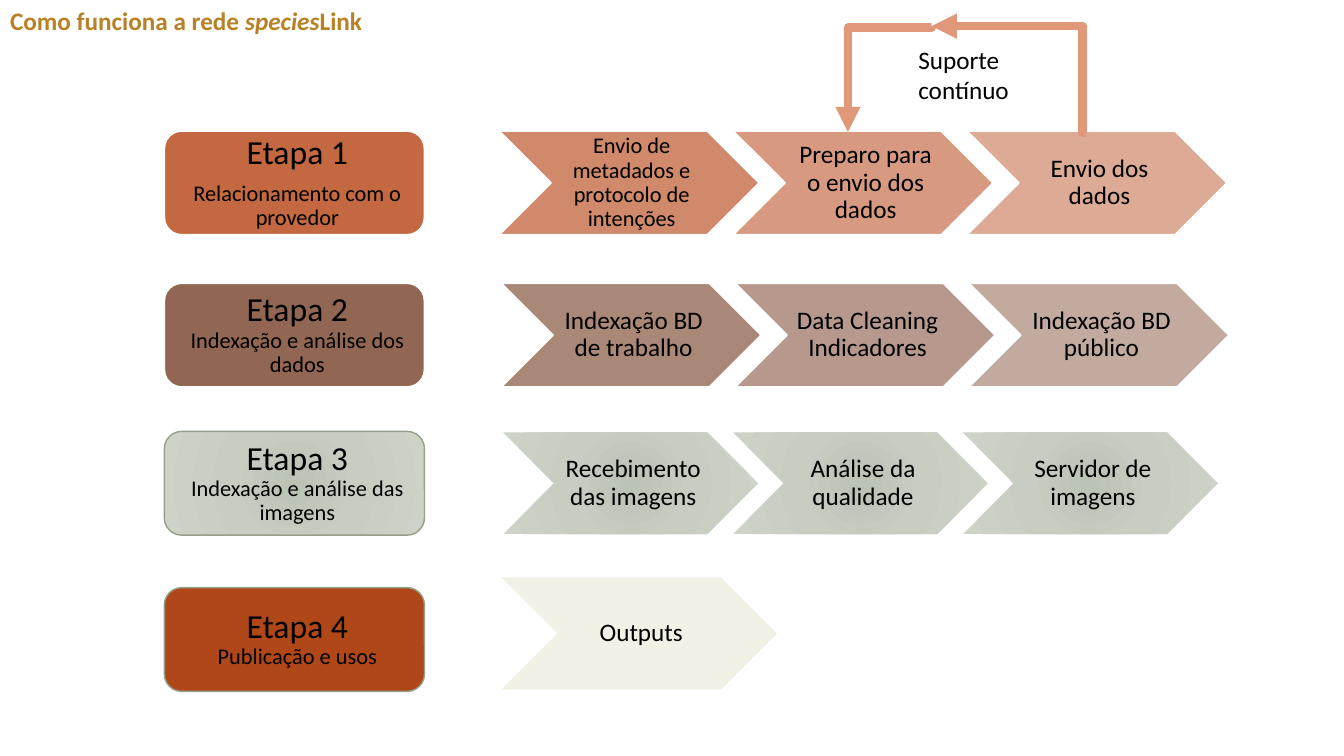
from dataclasses import dataclass
from typing import Optional

from lxml.etree import SubElement
from pptx import Presentation
from pptx.dml.color import RGBColor
from pptx.enum.shapes import MSO_CONNECTOR, MSO_SHAPE
from pptx.enum.text import MSO_ANCHOR, MSO_AUTO_SIZE, PP_ALIGN
from pptx.oxml.ns import qn
from pptx.util import Pt

PX = 9144
FONT = "Calibri"
COLOURS = {
    "title": "B98125", "text": "000000", "white": "FFFFFF", "arrow": "E09878",
    "rust": "BD582C", "brown": "865640", "cream": "E7E4CC", "brick": "B04718",
    "olive": "94A088",
}
SAGE_STOPS = ((0, "BBC3B5"), (45, "C7CDC1"), (100, "CDD4C7"))
STAGE_LEFT, STAGE_WIDTH, STAGE_HEIGHT = 163, 258, 103


@dataclass(frozen=True)
class Step:
    text: str
    alpha: int = 100
    size: int = 18


@dataclass(frozen=True)
class Stage:
    text: str
    top: int
    fill: str
    alpha: int
    border: str
    border_width: float
    steps_at: tuple[int, int, int, int]
    steps_fill: str
    steps_border: Optional[str]
    steps: tuple[Step, ...]


@dataclass(frozen=True)
class Elbow:
    start: tuple[int, int]
    end: tuple[int, int]
    bend: int
    turn: int = 0


STAGES = (
    Stage("Etapa 1\nRelacionamento com o provedor", 130, "rust", 90, "white", 1.25,
          (495, 130, 258, 103), "rust", "white",
          (Step("Envio de metadados e protocolo de intenções", 70, 16),
           Step("Preparo para o envio dos dados", 60),
           Step("Envio dos dados", 50))),
    Stage("Etapa 2\vIndexação e análise dos dados", 281, "brown", 90, "white", 1.25,
          (497, 281, 258, 103), "brown", "white",
          (Step("Indexação BD de trabalho", 70),
           Step("Data Cleaning\vIndicadores", 60),
           Step("Indexação BD público", 50))),
    Stage("Etapa 3\vIndexação e análise das imagens", 428, "sage", 100, "olive", 1,
          (499, 429, 253, 101), "sage", None,
          (Step("Recebimento das imagens"),
           Step("Análise da qualidade"),
           Step("Servidor de imagens"))),
    Stage("Etapa 4\vPublicação e usos", 583, "brick", 100, "olive", 1,
          (495, 572, 277, 113), "cream", "white",
          (Step("Outputs", 50),)),
)
SUPPORT_LOOP = (
    Elbow((1077, 132), (924, 26), 2100),
    Elbow((830, 37), (935, 120), 1400, 90),
)


def rgb(name: str) -> RGBColor:
    return RGBColor.from_string(COLOURS[name])


def style_font(font, size: int, colour: str = "text") -> None:
    font.name = FONT
    font.size = Pt(size)
    font.color.rgb = rgb(colour)


def fill_sage(shape) -> None:
    shape.fill.background()
    properties = shape.element.spPr
    empty = properties.find(qn("a:noFill"))
    gradient = SubElement(properties, qn("a:gradFill"), rotWithShape="1")
    properties.replace(empty, gradient)
    stops = SubElement(gradient, qn("a:gsLst"))
    for position, value in SAGE_STOPS:
        stop = SubElement(stops, qn("a:gs"), pos=str(position * 1000))
        SubElement(stop, qn("a:srgbClr"), val=value)
    circle = SubElement(gradient, qn("a:path"))
    circle.set("path", "circle")
    SubElement(circle, qn("a:fillToRect"), {side: "100000" for side in "ltrb"})


def fill_shape(shape, colour: str, alpha: int) -> None:
    if colour == "sage":
        fill_sage(shape)
        return
    shape.fill.solid()
    shape.fill.fore_color.rgb = rgb(colour)
    if alpha < 100:
        value = shape.element.spPr.find(f"{qn('a:solidFill')}/{qn('a:srgbClr')}")
        SubElement(value, qn("a:alpha"), val=str(alpha * 1000))


def draw_block(slide, kind, at: tuple[int, int, int, int], text: str,
               sizes: tuple[int, ...], fill: str, alpha: int,
               border: Optional[str], border_width: float,
               inset_left: int, inset: int) -> None:
    block = slide.shapes.add_shape(kind, *(length * PX for length in at))
    block.shadow.inherit = False
    fill_shape(block, fill, alpha)
    if border:
        block.line.color.rgb = rgb(border)
        block.line.width = Pt(border_width)
    else:
        block.line.fill.background()
    frame = block.text_frame
    frame.word_wrap = True
    frame.vertical_anchor = MSO_ANCHOR.MIDDLE
    frame.margin_left = inset_left * PX
    frame.margin_top = frame.margin_right = frame.margin_bottom = inset * PX
    frame.text = text
    for paragraph in frame.paragraphs:
        paragraph.alignment = PP_ALIGN.CENTER
        paragraph.line_spacing = 0.9
    for paragraph in frame.paragraphs[:-1]:
        paragraph.space_after = Pt(8)
    runs = [run for paragraph in frame.paragraphs for run in paragraph.runs]
    for run, size in zip(runs, sizes):
        style_font(run.font, size)


def draw_stage(slide, stage: Stage) -> None:
    draw_block(slide, MSO_SHAPE.ROUNDED_RECTANGLE,
               (STAGE_LEFT, stage.top, STAGE_WIDTH, STAGE_HEIGHT), stage.text, (24, 16),
               stage.fill, stage.alpha, stage.border, stage.border_width, 10, 4)
    left, top, width, height = stage.steps_at
    pitch = round(width * 0.9)
    for index, step in enumerate(stage.steps):
        draw_block(slide, MSO_SHAPE.CHEVRON, (left + index * pitch, top, width, height),
                   step.text, (step.size, step.size), stage.steps_fill, step.alpha,
                   stage.steps_border, 1.25, 8, 3)


def draw_elbow(slide, elbow: Elbow) -> None:
    arrow = slide.shapes.add_connector(
        MSO_CONNECTOR.ELBOW, *(length * PX for length in elbow.start + elbow.end))
    arrow.line.color.rgb = rgb("arrow")
    arrow.line.width = Pt(6)
    properties = arrow.element.spPr
    if elbow.turn:
        properties.find(qn("a:xfrm")).set("rot", str(elbow.turn * 60000))
    geometry = properties.find(qn("a:prstGeom"))
    adjustments = geometry.find(qn("a:avLst"))
    if adjustments is None:
        adjustments = SubElement(geometry, qn("a:avLst"))
    SubElement(adjustments, qn("a:gd"), name="adj1", fmla=f"val {elbow.bend}")
    SubElement(properties.find(qn("a:ln")), qn("a:tailEnd"), type="triangle")
    SubElement(properties, qn("a:effectLst"))


def write_title(slide) -> None:
    title = slide.shapes.title
    title.left, title.top, title.width, title.height = 0, 0, 421 * PX, 40 * PX
    frame = title.text_frame
    frame.word_wrap = True
    frame.auto_size = MSO_AUTO_SIZE.NONE
    frame.vertical_anchor = MSO_ANCHOR.TOP
    paragraph = frame.paragraphs[0]
    paragraph.alignment = PP_ALIGN.LEFT
    for text, italic in (("Como funciona a rede ", False), ("species", True), ("Link", False)):
        run = paragraph.add_run()
        run.text = text
        style_font(run.font, 18, "title")
        run.font.bold = True
        run.font.italic = italic


def write_support(slide) -> None:
    support = slide.shapes.add_textbox(901 * PX, 39 * PX, 124 * PX, 71 * PX)
    support.text_frame.word_wrap = True
    support.text_frame.text = "Suporte contínuo"
    style_font(support.text_frame.paragraphs[0].runs[0].font, 18)


def main() -> None:
    deck = Presentation()
    deck.slide_width, deck.slide_height = 1333 * PX, 750 * PX
    slide = deck.slides.add_slide(deck.slide_layouts[5])
    write_title(slide)
    for stage in STAGES:
        draw_stage(slide, stage)
    for elbow in SUPPORT_LOOP:
        draw_elbow(slide, elbow)
    write_support(slide)
    deck.save("out.pptx")


if __name__ == "__main__":
    main()
